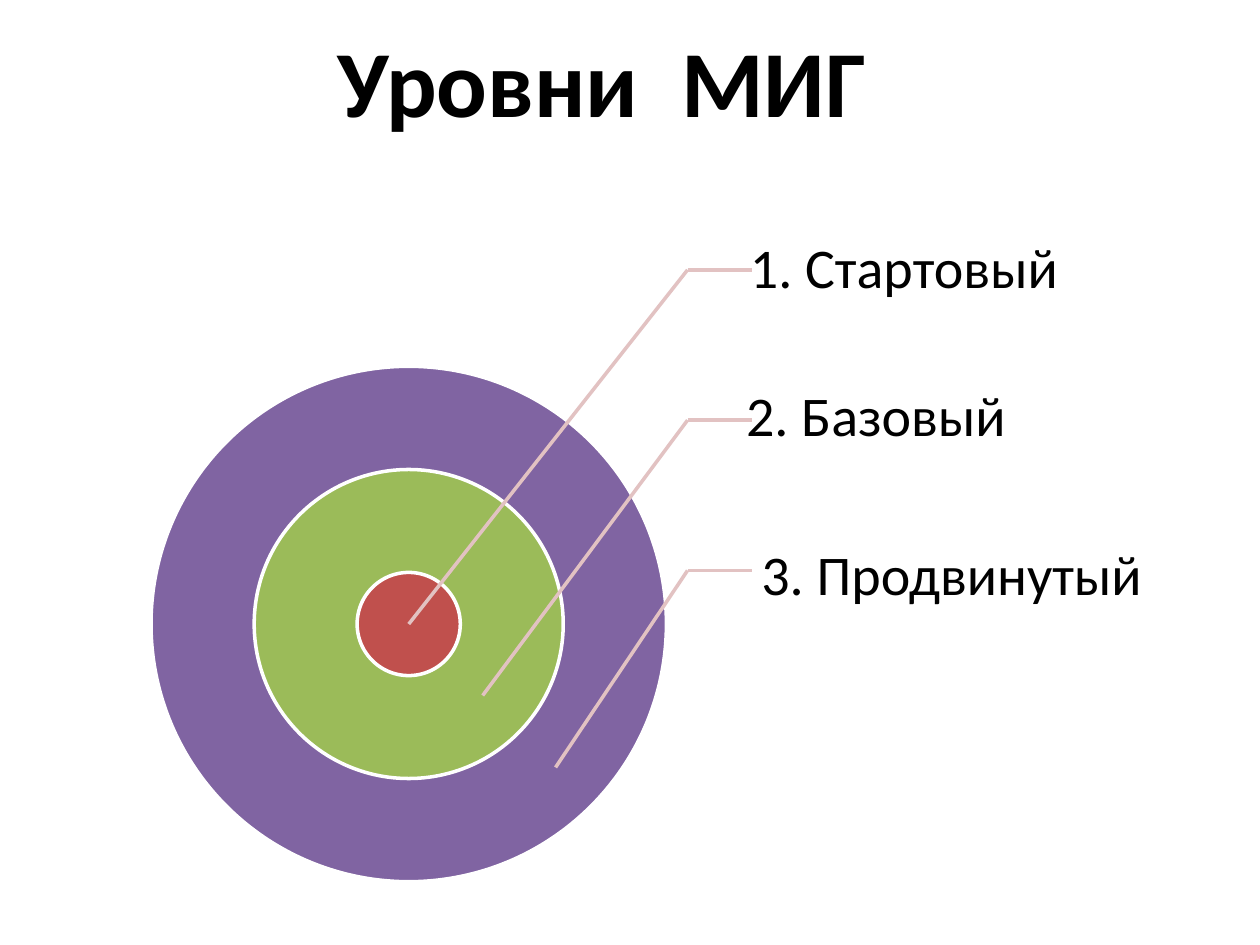
import pptx
import pptx.util
import pptx.dml.color
import pptx.enum.shapes
import pptx.enum.text
import pptx.oxml
import pptx.oxml.ns

Cm = pptx.util.Cm
Pt = pptx.util.Pt
COLORS = {
    "outer": "8064A2",
    "middle": "9BBB59",
    "inner": "C0504D",
    "leader": "E2C2C2",
    "outline": "FFFFFF",
    "text": "000000",
}


def color(name):
    return pptx.dml.color.RGBColor.from_string(COLORS[name])


def add_leader(page, start, end):
    line = page.shapes.add_connector(
        pptx.enum.shapes.MSO_CONNECTOR.STRAIGHT,
        Cm(start[0]), Cm(start[1]), Cm(end[0]), Cm(end[1]))
    line.line.color.rgb = color("leader")
    line.line.width = Pt(2)
    properties = line._element.spPr
    properties.append(pptx.oxml.parse_xml(
        "<a:effectLst %s/>" % pptx.oxml.ns.nsdecls("a")))


deck = pptx.Presentation()
deck.slide_width = Cm(25.4)
deck.slide_height = Cm(19.05)
page = deck.slides.add_slide(deck.slide_layouts[5])

# Title
title = page.shapes.title
title.left, title.top, title.width, title.height = Cm(6.5), Cm(0.33), Cm(11.28), Cm(2.57)
title.text_frame.text = "Уровни  МИГ"
title.text_frame.word_wrap = False
title.text_frame.vertical_anchor = pptx.enum.text.MSO_ANCHOR.TOP
para = title.text_frame.paragraphs[0]
para.alignment = pptx.enum.text.PP_ALIGN.CENTER
span = para.runs[0]
span.font.name = "Calibri"
span.font.size = Pt(54)
span.font.bold = True
span.font.color.rgb = color("text")

# Concentric circles, from the outside in
center_x, center_y = 8.24, 12.58
for name, diameter in [("outer", 10.39), ("middle", 6.23), ("inner", 2.08)]:
    circle = page.shapes.add_shape(
        pptx.enum.shapes.MSO_SHAPE.OVAL,
        Cm(center_x - diameter / 2), Cm(center_y - diameter / 2),
        Cm(diameter), Cm(diameter))
    circle.shadow.inherit = False
    circle.fill.solid()
    circle.fill.fore_color.rgb = color(name)
    circle.line.color.rgb = color("outline")
    circle.line.width = Pt(2)

# Level labels with bent leader lines: text, left, top, width, target point
levels = [
    ("1. Стартовый", 14.48, 3.94, 8.15, (8.24, 12.58)),
    ("2. Базовый", 14.4, 6.93, 7.44, (9.73, 14.02)),
    ("3. Продвинутый", 14.71, 10.13, 8.81, (11.2, 15.47)),
]
for index, (label, left, top, width, target) in enumerate(levels):
    box = page.shapes.add_textbox(Cm(left), Cm(top), Cm(width), Cm(3.02))
    frame = box.text_frame
    frame.text = label
    frame.word_wrap = True
    frame.vertical_anchor = pptx.enum.text.MSO_ANCHOR.MIDDLE
    frame.margin_left = Cm(0.64)
    frame.margin_top = frame.margin_right = frame.margin_bottom = Cm(0.1)
    para = frame.paragraphs[0]
    para.line_spacing = 0.9
    span = para.runs[0]
    span.font.name = "Calibri"
    span.font.size = Pt(32)
    span.font.color.rgb = color("text")

    bend_y = 5.44 + 3.03 * index
    add_leader(page, (13.86, bend_y), (15.16, bend_y))
    add_leader(page, (13.86, bend_y), target)

deck.save("out.pptx")
